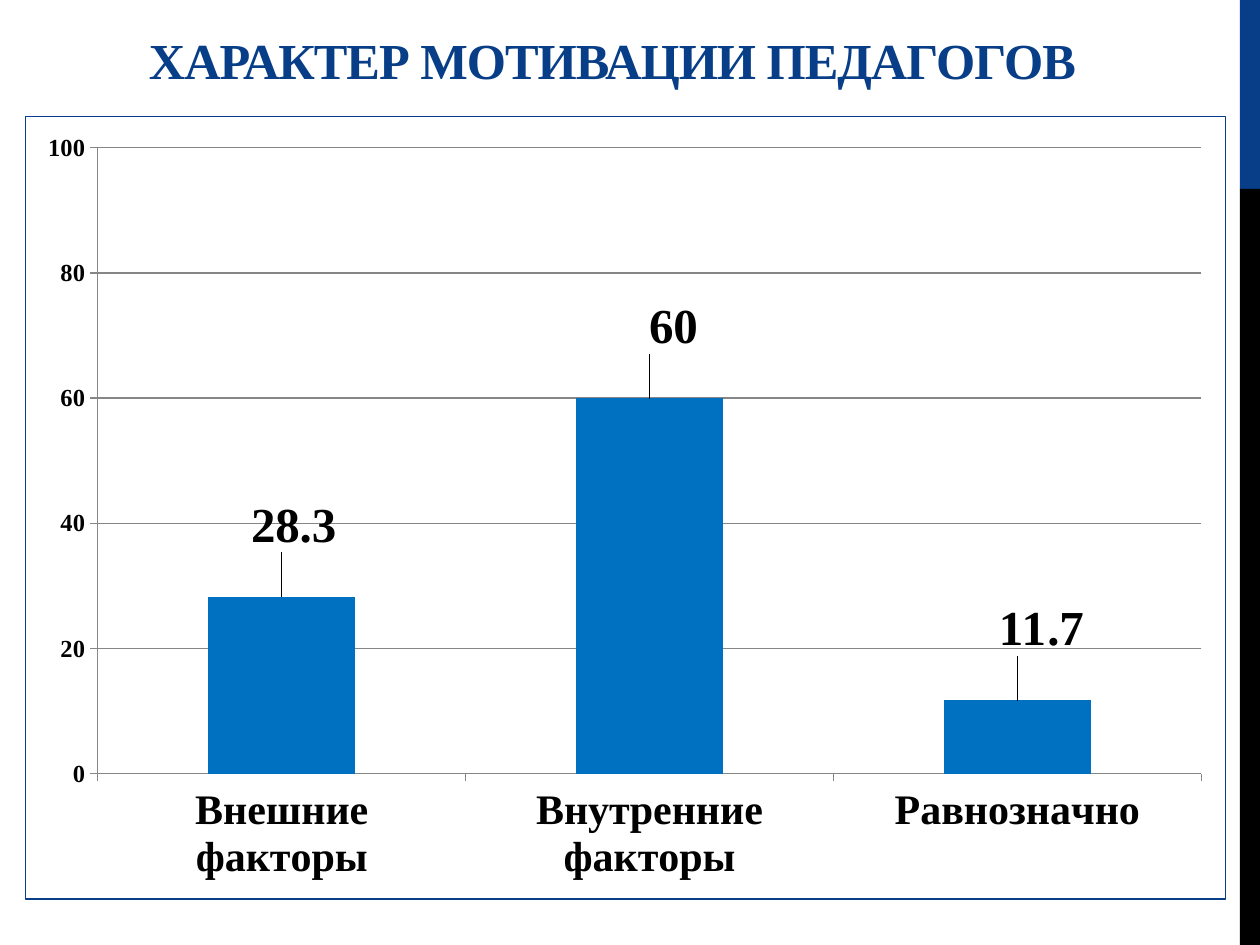
from lxml import etree
from pptx import Presentation
from pptx.chart.data import CategoryChartData
from pptx.dml.color import RGBColor
from pptx.enum.chart import XL_CHART_TYPE, XL_LABEL_POSITION, XL_TICK_MARK
from pptx.enum.shapes import MSO_SHAPE
from pptx.enum.text import MSO_ANCHOR, MSO_AUTO_SIZE, PP_ALIGN
from pptx.oxml import parse_xml
from pptx.oxml.ns import nsdecls, qn
from pptx.util import Inches, Pt

RECT = MSO_SHAPE.RECTANGLE
COLUMN = XL_CHART_TYPE.COLUMN_CLUSTERED
OUTSIDE_END = XL_LABEL_POSITION.OUTSIDE_END
TICK_OUT, TICK_NONE = XL_TICK_MARK.OUTSIDE, XL_TICK_MARK.NONE

FONT = "Times New Roman"
COLORS = {"navy": "073E87", "black": "000000", "bar": "0070C0", "grid": "868686"}
COLORS = {name: RGBColor.from_string(value) for name, value in COLORS.items()}


def style_font(font, size, color):
    font.name = FONT
    font.size = Pt(size)
    font.bold = True
    font.color.rgb = COLORS[color]


def manual_layout(**values):
    """Return a c:layout element with the given manual settings, in order."""
    layout = parse_xml(f"<c:layout {nsdecls('c')}><c:manualLayout/></c:layout>")
    for tag, value in values.items():
        etree.SubElement(layout[0], qn(f"c:{tag}")).set("val", str(value))
    return layout


prs = Presentation()
prs.slide_width, prs.slide_height = Inches(10), Inches(7.5)
s = prs.slides.add_slide(prs.slide_layouts[5])

# Side stripe
for top, height, color in [(0, 1.5, "navy"), (1.5, 6, "black")]:
    sp = s.shapes.add_shape(RECT, Inches(9.84), Inches(top), Inches(0.16), Inches(height))
    sp.shadow.inherit = False
    sp.fill.solid()
    sp.fill.fore_color.rgb = COLORS[color]
    sp.line.fill.background()

# Title
title = s.shapes.title
title.left, title.top = Inches(0), Inches(0.17)
title.width, title.height = Inches(9.72), Inches(0.59)
tf = title.text_frame
tf.word_wrap = True
tf.auto_size = MSO_AUTO_SIZE.NONE
tf.vertical_anchor = MSO_ANCHOR.BOTTOM
p = tf.paragraphs[0]
p.alignment = PP_ALIGN.CENTER
r = p.add_run()
r.text = "ХАРАКТЕР МОТИВАЦИИ ПЕДАГОГОВ"
style_font(r.font, 28.8, "navy")
r.font._element.set("spc", "-60")

# Chart
data = CategoryChartData()
data.categories = ["Внешние факторы", "Внутренние факторы", "Равнозначно"]
data.add_series("Series 1", [28.3, 60, 11.7])
chart = s.shapes.add_chart(
    COLUMN, Inches(0.2), Inches(0.92), Inches(9.53), Inches(6.22), data).chart
chart.has_legend = False
chart.has_title = False
style_font(chart.font, 14, "black")

chart_space = chart._chartSpace
chart_space.find(qn("c:chart")).addnext(parse_xml(
    f"<c:spPr {nsdecls('c', 'a')}><a:noFill/><a:ln w='9525'><a:solidFill>"
    f"<a:srgbClr val='{COLORS['navy']}'/></a:solidFill></a:ln></c:spPr>"))
plot_area = chart_space.find(".//" + qn("c:plotArea"))
for old in plot_area.findall(qn("c:layout")):
    plot_area.remove(old)
plot_area.insert(0, manual_layout(
    layoutTarget="inner", xMode="edge", yMode="edge", x=0.06, y=0.04, w=0.92, h=0.8))

value_axis, category_axis = chart.value_axis, chart.category_axis
value_axis.minimum_scale, value_axis.maximum_scale = 0, 100
value_axis.major_unit = 20
value_axis.has_major_gridlines = True
for axis, size in [(value_axis, 14), (category_axis, 24)]:
    axis.major_tick_mark = TICK_OUT
    axis.minor_tick_mark = TICK_NONE
    style_font(axis.tick_labels.font, size, "black")
for line in [value_axis.major_gridlines.format.line,
             value_axis.format.line, category_axis.format.line]:
    line.color.rgb = COLORS["grid"]
    line.width = Pt(0.75)

plot = chart.plots[0]
plot.gap_width = 150
plot.vary_by_categories = False
series = plot.series[0]
series.invert_if_negative = False
series.format.fill.solid()
series.format.fill.fore_color.rgb = COLORS["bar"]

# Value labels, each shifted from its place above the bar
labels = series.data_labels
labels.show_value = True
style_font(labels.font, 28, "black")
for i, shift in enumerate([0.01, 0.02, 0.025]):
    label = series.points[i].data_label
    label.position = OUTSIDE_END
    style_font(label.font, 28, "black")
for idx, shift in zip(labels._element.findall(f"{qn('c:dLbl')}/{qn('c:idx')}"),
                      [0.01, 0.02, 0.02]):
    idx.addnext(manual_layout(x=shift, y=-0.05))

prs.save("out.pptx")
